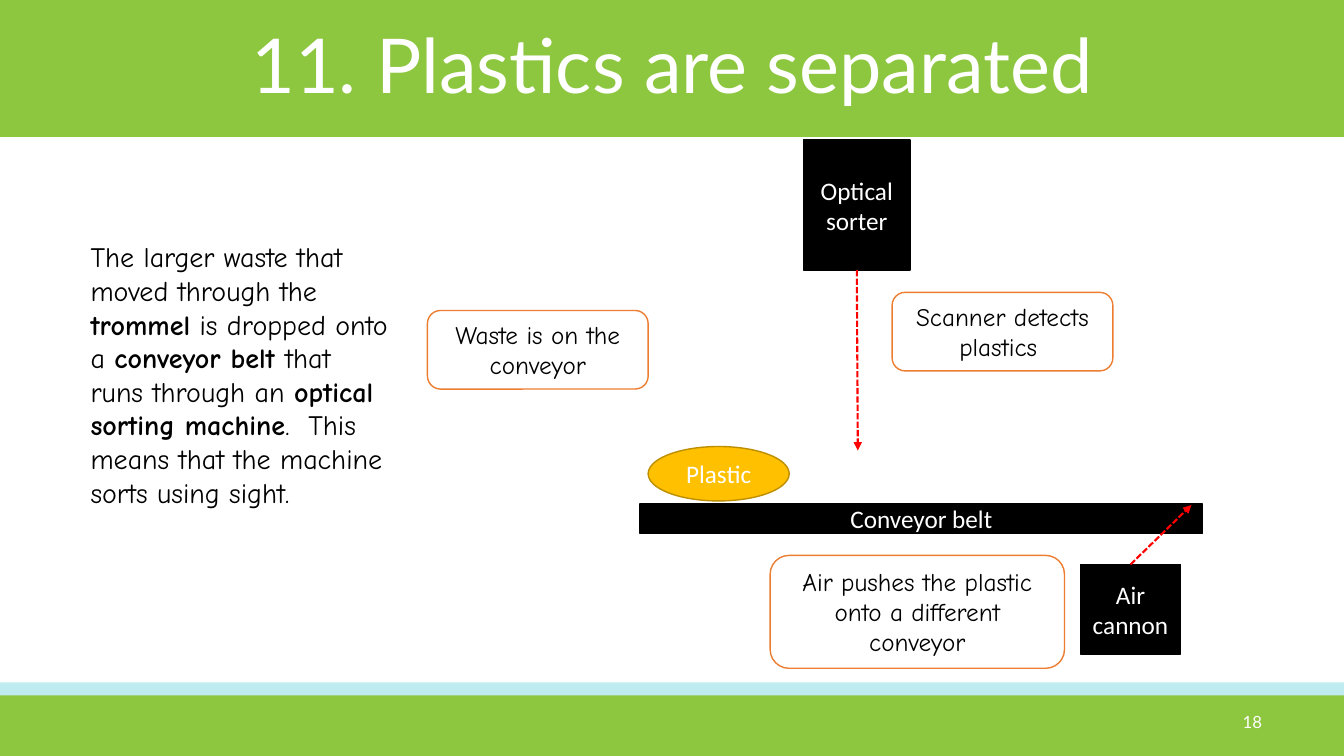
from dataclasses import dataclass
from typing import Optional

from lxml.etree import SubElement
from pptx import Presentation
from pptx.dml.color import RGBColor as Rgb
from pptx.enum.dml import MSO_LINE as Dash
from pptx.enum.shapes import MSO_CONNECTOR as Wire, MSO_SHAPE as Form
from pptx.enum.text import MSO_ANCHOR as Anchor, MSO_AUTO_SIZE as Fit, PP_ALIGN as Align
from pptx.oxml.ns import qn
from pptx.util import Inches, Pt

# Grid: square cells, ten to the inch
CELL = Inches(0.1)
COLS, ROWS = 133.33, 75


@dataclass(frozen=True)
class Theme:
    green: str = "8DC63F"
    aqua: str = "20BFD0"
    white: str = "FFFFFF"
    black: str = "000000"
    gold: str = "FFC000"
    ochre: str = "BD8E00"
    orange: str = "ED7D31"
    red: str = "FF0000"
    head: str = "Lato"
    label: str = "Calibri"
    hand: str = "Comic Neue"
    title: int = 54
    body: int = 20
    note: int = 18
    small: int = 12


@dataclass(frozen=True)
class Area:
    col: float
    row: float
    wide: float
    high: float

    def box(self) -> list[int]:
        return [cells(n) for n in (self.col, self.row, self.wide, self.high)]


@dataclass(frozen=True)
class Style:
    form: Form
    fill: str
    line: Optional[str] = None
    font: str = ""
    ink: str = ""
    anchor: Anchor = Anchor.MIDDLE
    fit: Fit = Fit.NONE


@dataclass(frozen=True)
class Part:
    text: str
    area: Area
    style: Style


@dataclass(frozen=True)
class Arrow:
    start: str
    side: int
    col: float
    row: float


T = Theme()
BAND = Style(Form.RECTANGLE, T.green)
STRIPE = Style(Form.RECTANGLE, T.aqua)
BLOCK = Style(Form.RECTANGLE, T.black, T.black, T.label, T.white)
ITEM = Style(Form.OVAL, T.gold, T.ochre, T.label, T.white)
NOTE = Style(Form.ROUNDED_RECTANGLE, T.white, T.orange, T.hand, T.black,
             Anchor.TOP, Fit.SHAPE_TO_FIT_TEXT)

HEAD = Area(0, 0, COLS, 13.6)
BANDS = [
    Part("", Area(0, 67.7, COLS, 2.4), STRIPE),
    Part("", HEAD, BAND),
    Part("", Area(0, 69, COLS, ROWS - 69), BAND),
]
PARTS = [
    Part("Optical sorter", Area(79.7, 13.9, 10.6, 12.9), BLOCK),
    Part("Conveyor belt", Area(63.5, 50, 55.8, 2.9), BLOCK),
    Part("Air cannon", Area(107.2, 56, 9.9, 8.9), BLOCK),
    Part("Plastic", Area(64.3, 44.3, 14, 5.4), ITEM),
    Part("Waste is on the conveyor", Area(42.4, 30.8, 21.9, 7.8), NOTE),
    Part("Scanner detects plastics ", Area(88.5, 29, 21.9, 7.8), NOTE),
    Part("Air pushes the plastic onto a different conveyor",
         Area(76.4, 55.1, 29.2, 11.2), NOTE),
]
ARROWS = [
    Arrow("Optical sorter", 2, 85.1, 44.7),
    Arrow("Air cannon", 0, 118.2, 50.1),
]
# Asterisks enclose bold words
STORY = ("The larger waste that moved through the *trommel* is dropped onto a "
         "*conveyor belt *that runs through an *optical sorting machine*.  "
         "This means that the machine sorts using sight.")


def cells(n: float) -> int:
    return round(n * CELL)


def tint(name: str) -> Rgb:
    return Rgb.from_string(name)


def write(shape, text: str, *, font: str, size: int, ink: str,
          align: Align = Align.LEFT, anchor: Anchor = Anchor.TOP,
          fit: Fit = Fit.NONE, lead: Optional[float] = None) -> None:
    frame = shape.text_frame
    frame.word_wrap = True
    frame.auto_size = fit
    frame.vertical_anchor = anchor
    para = frame.paragraphs[0]
    para.alignment = align
    if lead:
        para.line_spacing = lead
    for i, words in enumerate(text.split("*")):
        run = para.add_run()
        run.text = words
        run.font.name = font
        run.font.size = Pt(size)
        run.font.bold = i % 2 == 1
        run.font.color.rgb = tint(ink)


def draw(slide, part: Part):
    style = part.style
    shape = slide.shapes.add_shape(style.form, *part.area.box())
    shape.shadow.inherit = False
    shape.fill.solid()
    shape.fill.fore_color.rgb = tint(style.fill)
    if style.line:
        shape.line.color.rgb = tint(style.line)
        shape.line.width = Pt(1)
    else:
        shape.line.fill.background()
    if part.text:
        write(shape, part.text, font=style.font, size=T.note, ink=style.ink,
              align=Align.CENTER, anchor=style.anchor, fit=style.fit)
    return shape


def fade(shape, share: int) -> None:
    color = shape.element.spPr.find(qn("a:solidFill"))[0]
    SubElement(color, qn("a:alpha"), val=str(share * 1000))


def point(slide, arrow: Arrow, start) -> None:
    end = cells(arrow.col), cells(arrow.row)
    wire = slide.shapes.add_connector(Wire.STRAIGHT, *end, *end)
    wire.begin_connect(start, arrow.side)
    wire.line.color.rgb = tint(T.red)
    wire.line.width = Pt(1.5)
    wire.line.dash_style = Dash.SQUARE_DOT
    props = wire.element.spPr
    SubElement(props.find(qn("a:ln")), qn("a:tailEnd"), type="triangle")
    SubElement(props, qn("a:effectLst"))


def main() -> None:
    deck = Presentation()
    deck.slide_width, deck.slide_height = cells(COLS), cells(ROWS)
    slide = deck.slides.add_slide(deck.slide_layouts[5])

    # Bands behind the title and page number
    stripe, *_ = [draw(slide, band) for band in BANDS]
    fade(stripe, 29)

    # Title, raised above the bands
    title = slide.shapes.title
    title.left, title.top, title.width, title.height = HEAD.box()
    title.element.getparent().append(title.element)
    write(title, "11. Plastics are separated", font=T.head, size=T.title,
          ink=T.white, align=Align.CENTER, anchor=Anchor.MIDDLE, lead=0.9)

    # Page number and story
    page = slide.shapes.add_textbox(*Area(96.2, 69.6, 30, 4).box())
    write(page, "18", font=T.head, size=T.small, ink=T.white,
          align=Align.RIGHT, anchor=Anchor.MIDDLE)
    story = slide.shapes.add_textbox(*Area(8, 23.3, 31.9, 31.3).box())
    write(story, STORY, font=T.hand, size=T.body, ink=T.black,
          fit=Fit.SHAPE_TO_FIT_TEXT)

    # Sorting diagram
    made = {part.text: draw(slide, part) for part in PARTS}
    for arrow in ARROWS:
        point(slide, arrow, made[arrow.start])

    deck.save("out.pptx")


if __name__ == "__main__":
    main()
